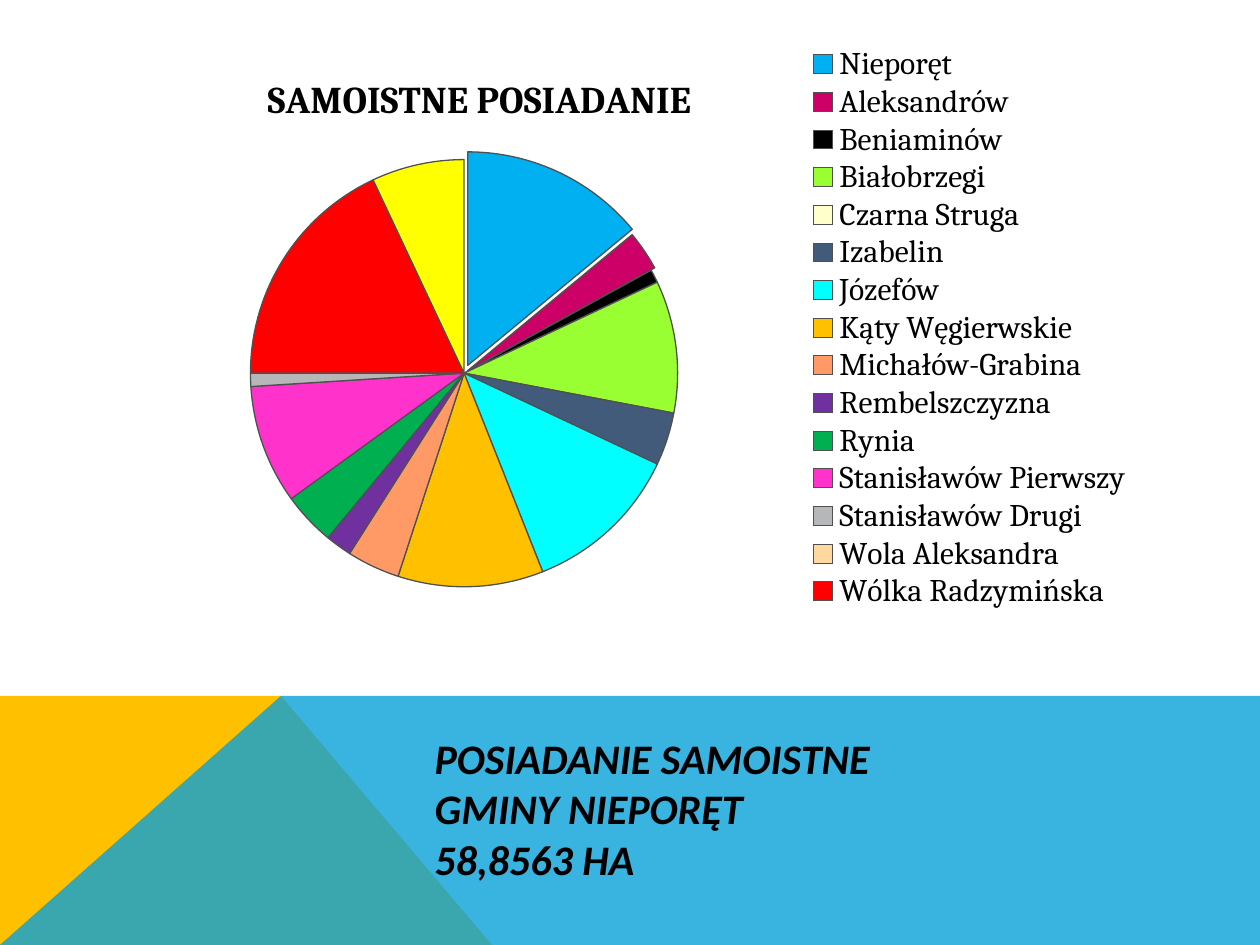
import pptx
import pptx.chart.data
import pptx.dml.color
import pptx.enum.chart
import pptx.enum.text
import pptx.oxml
import pptx.oxml.ns
import pptx.util
from lxml import etree

RGBColor = pptx.dml.color.RGBColor
Pt = pptx.util.Pt
qn = pptx.oxml.ns.qn

BLACK = RGBColor(0x00, 0x00, 0x00)
OUTLINE = RGBColor(0x50, 0x50, 0x50)
AMBER = RGBColor(0xFF, 0xC0, 0x00)
BLUE = RGBColor(0x08, 0xA1, 0xD9)

VILLAGES = [
    ("Nieporęt", 14, RGBColor(0x00, 0xB0, 0xF0)),
    ("Aleksandrów", 3, RGBColor(0xCC, 0x00, 0x66)),
    ("Beniaminów", 1, BLACK),
    ("Białobrzegi", 10, RGBColor(0x99, 0xFF, 0x33)),
    ("Czarna Struga", 0, RGBColor(0xFF, 0xFF, 0xCC)),
    ("Izabelin", 4, RGBColor(0x43, 0x5B, 0x7A)),
    ("Józefów", 12, RGBColor(0x00, 0xFF, 0xFF)),
    ("Kąty Węgierwskie", 11, AMBER),
    ("Michałów-Grabina", 4, RGBColor(0xFF, 0x99, 0x66)),
    ("Rembelszczyzna", 2, RGBColor(0x70, 0x30, 0xA0)),
    ("Rynia", 4, RGBColor(0x00, 0xB0, 0x50)),
    ("Stanisławów Pierwszy", 9, RGBColor(0xFF, 0x33, 0xCC)),
    ("Stanisławów Drugi", 1, RGBColor(0xB6, 0xB7, 0xB9)),
    ("Wola Aleksandra", 0, RGBColor(0xFF, 0xD8, 0xA0)),
    ("Wólka Radzymińska", 18, RGBColor(0xFF, 0x00, 0x00)),
    ("", 7, RGBColor(0xFF, 0xFF, 0x00)),
]
EXPLODED = {0: 4, 1: 2}
HEADING = "SAMOISTNE POSIADANIE"
TITLE_LINES = ["POSIADANIE SAMOISTNE", "GMINY NIEPORĘT", "58,8563 HA"]

EMU_PER_PX = 914400 / 126


def px(n):
    return round(n * EMU_PER_PX)


def add_polygon(s, points, color, alpha=None):
    builder = s.shapes.build_freeform(*points[0], scale=EMU_PER_PX)
    builder.add_line_segments(points[1:], close=True)
    sp = builder.convert_to_shape()
    sp.shadow.inherit = False
    sp.fill.solid()
    sp.fill.fore_color.rgb = color
    sp.line.fill.background()
    if alpha:
        clr = sp.element.spPr.find(qn("a:solidFill")).find(qn("a:srgbClr"))
        etree.SubElement(clr, qn("a:alpha")).set("val", str(alpha * 1000))


def add_footer_band(s, x, y, w, h):
    bottom = y + h
    peak = (x + 281, y)
    add_polygon(s, [(x, bottom), (x, y), peak, (x + 492, bottom)], AMBER)
    add_polygon(s, [(x, bottom), peak, (x + w, y), (x + w, bottom)], BLUE, 80)


def add_run(p, text, font, size):
    r = p.add_run()
    r.text = text
    r.font.name = font
    r.font.size = Pt(size)
    r.font.bold = True
    r.font.color.rgb = BLACK
    return r


def add_title(s, x, y, w, h):
    sp = s.shapes.title
    sp.element.getparent().append(sp.element)
    sp.left, sp.top, sp.width, sp.height = map(px, (x, y, w, h))
    tf = sp.text_frame
    tf.word_wrap = True
    tf.auto_size = pptx.enum.text.MSO_AUTO_SIZE.NONE
    tf.vertical_anchor = pptx.enum.text.MSO_ANCHOR.MIDDLE
    p = tf.paragraphs[0]
    p.alignment = pptx.enum.text.PP_ALIGN.LEFT
    for i, line in enumerate(TITLE_LINES):
        if i:
            p.add_line_break()
        add_run(p, line, "Calibri", 24).font.italic = True


def set_layout(parent, index, **values):
    for old in parent.findall(qn("c:layout")):
        parent.remove(old)
    layout = pptx.oxml.parse_xml(
        f'<c:layout {pptx.oxml.ns.nsdecls("c")}><c:manualLayout/></c:layout>')
    for tag, value in values.items():
        etree.SubElement(layout[0], qn(f"c:{tag}")).set("val", str(value))
    parent.insert(index, layout)


def hide_legend_entry(legend, idx):
    entry = etree.Element(qn("c:legendEntry"))
    etree.SubElement(entry, qn("c:idx")).set("val", str(idx))
    etree.SubElement(entry, qn("c:delete")).set("val", "1")
    legend.find(qn("c:legendPos")).addnext(entry)


def style_slices(chart):
    series = chart.plots[0].series[0]
    for i, (_, _, color) in enumerate(VILLAGES):
        fmt = series.points[i].format
        fmt.fill.solid()
        fmt.fill.fore_color.rgb = color
        fmt.line.color.rgb = OUTLINE
        fmt.line.width = Pt(0.75)
    for dpt in chart.element.iter(qn("c:dPt")):
        amount = EXPLODED.get(int(dpt.find(qn("c:idx")).get("val")))
        if amount:
            explosion = etree.Element(qn("c:explosion"))
            explosion.set("val", str(amount))
            dpt.find(qn("c:spPr")).addprevious(explosion)


def add_pie(s, x, y, w, h):
    data = pptx.chart.data.CategoryChartData()
    data.categories = [name for name, _, _ in VILLAGES]
    data.add_series(HEADING, [value for _, value, _ in VILLAGES])
    chart = s.shapes.add_chart(
        pptx.enum.chart.XL_CHART_TYPE.PIE, *map(px, (x, y, w, h)), data).chart
    chart.font.name = "Cambria"
    chart.font.size = Pt(18)
    chart.font.color.rgb = BLACK

    chart.has_title = True
    p = chart.chart_title.text_frame.paragraphs[0]
    add_run(p, HEADING, "Cambria", 21.6)

    chart.has_legend = True
    chart.legend.position = pptx.enum.chart.XL_LEGEND_POSITION.RIGHT
    chart.legend.include_in_layout = False
    chart.plots[0].vary_by_categories = True
    style_slices(chart)

    area = chart.element.find(qn("c:chart"))
    legend = area.find(qn("c:legend"))
    edges = {"xMode": "edge", "yMode": "edge"}
    set_layout(area.find(qn("c:title")), 1, **edges, x=0.14, y=0.04)
    set_layout(legend, 1, **edges, x=0.65, y=0, w=0.34, h=1)
    set_layout(area.find(qn("c:plotArea")), 0, layoutTarget="inner", **edges,
               x=0.13, y=0.2, w=0.41, h=0.76)
    for i, (name, _, _) in enumerate(VILLAGES):
        if not name:
            hide_legend_entry(legend, i)


def main():
    prs = pptx.Presentation()
    prs.slide_width, prs.slide_height = px(1260), px(945)
    s = prs.slides.add_slide(prs.slide_layouts[5])
    add_footer_band(s, 0, 696, 1260, 249)
    add_title(s, 422, 770, 694, 76)
    add_pie(s, 115, 45, 1042, 566)
    prs.save("out.pptx")


if __name__ == "__main__":
    main()
